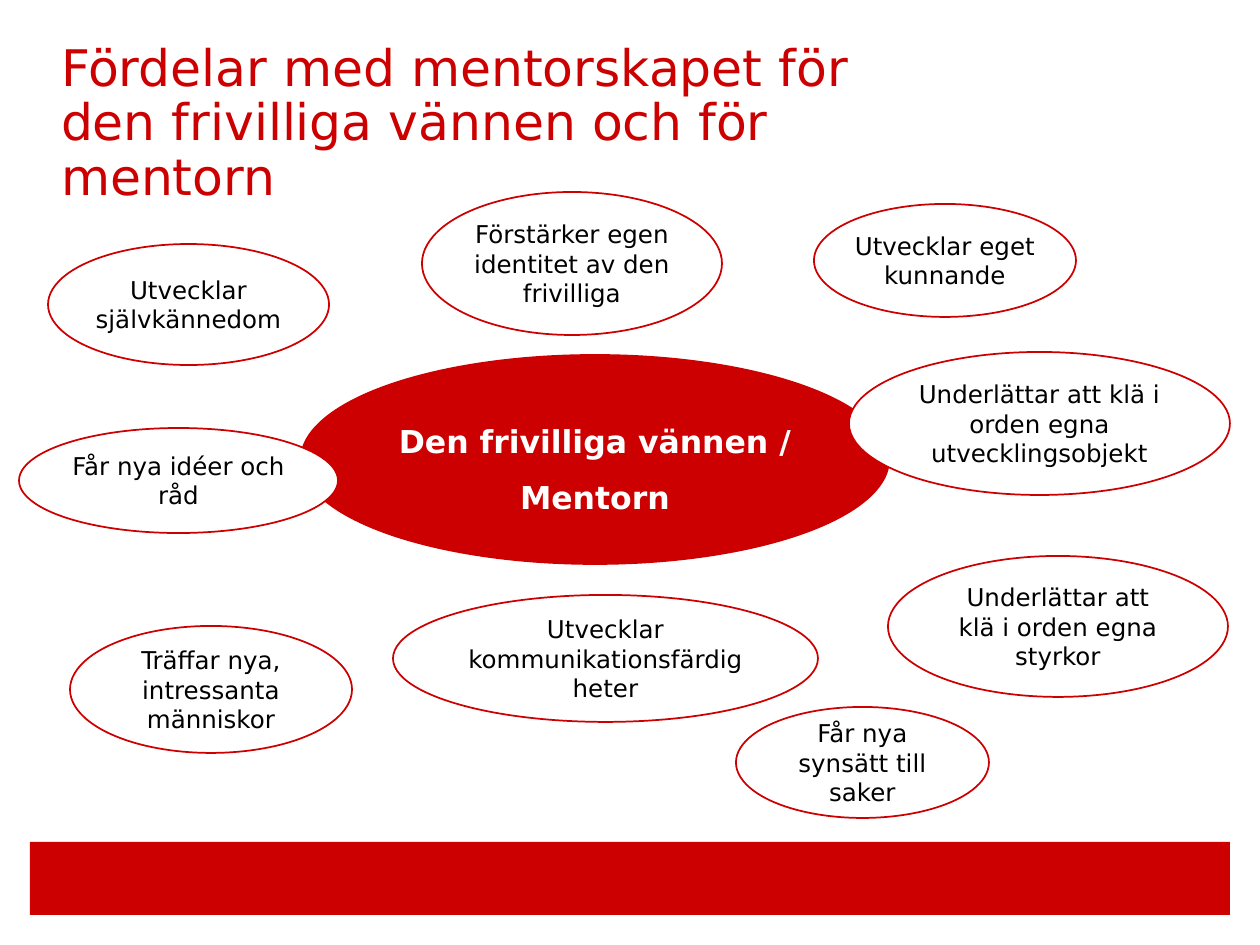
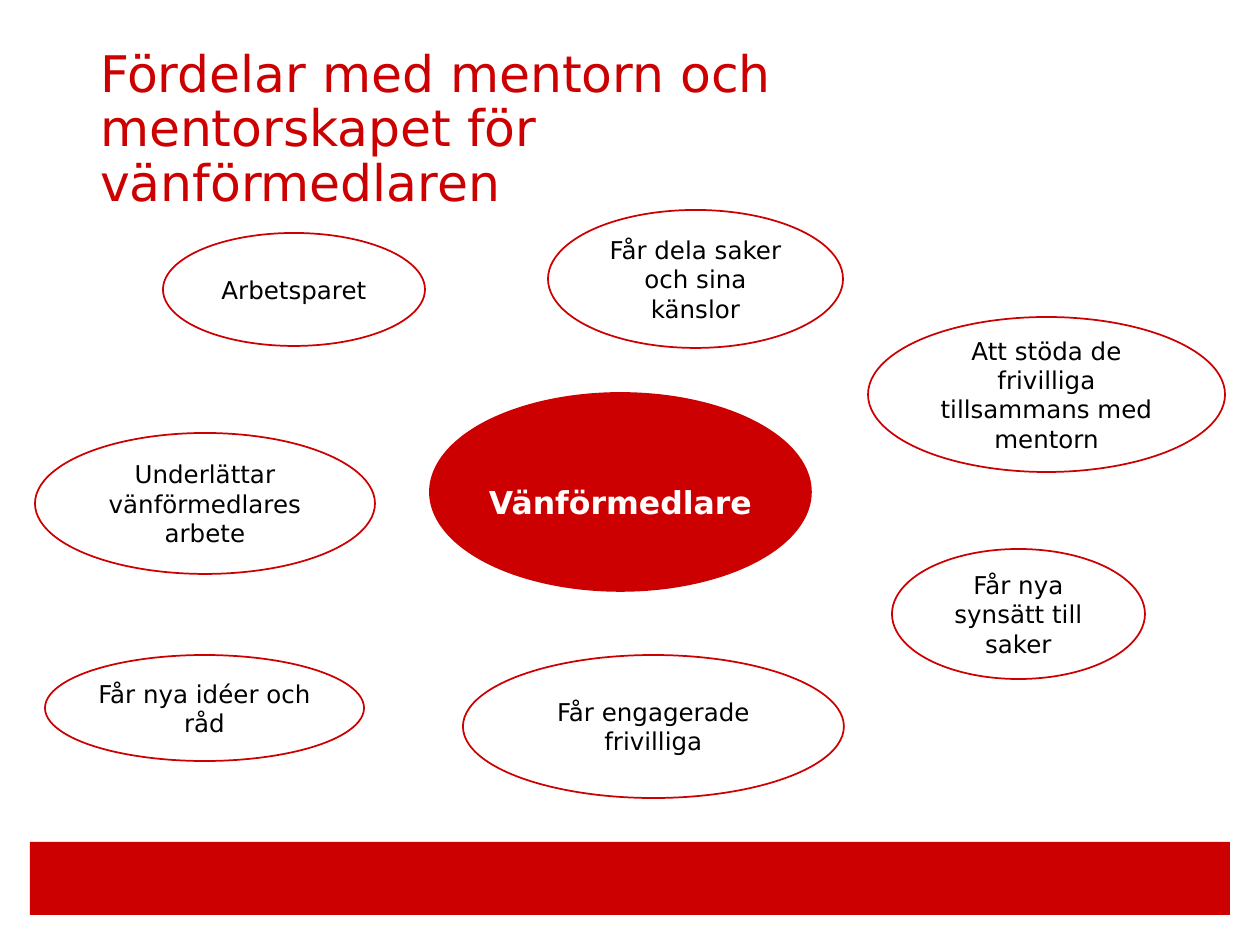
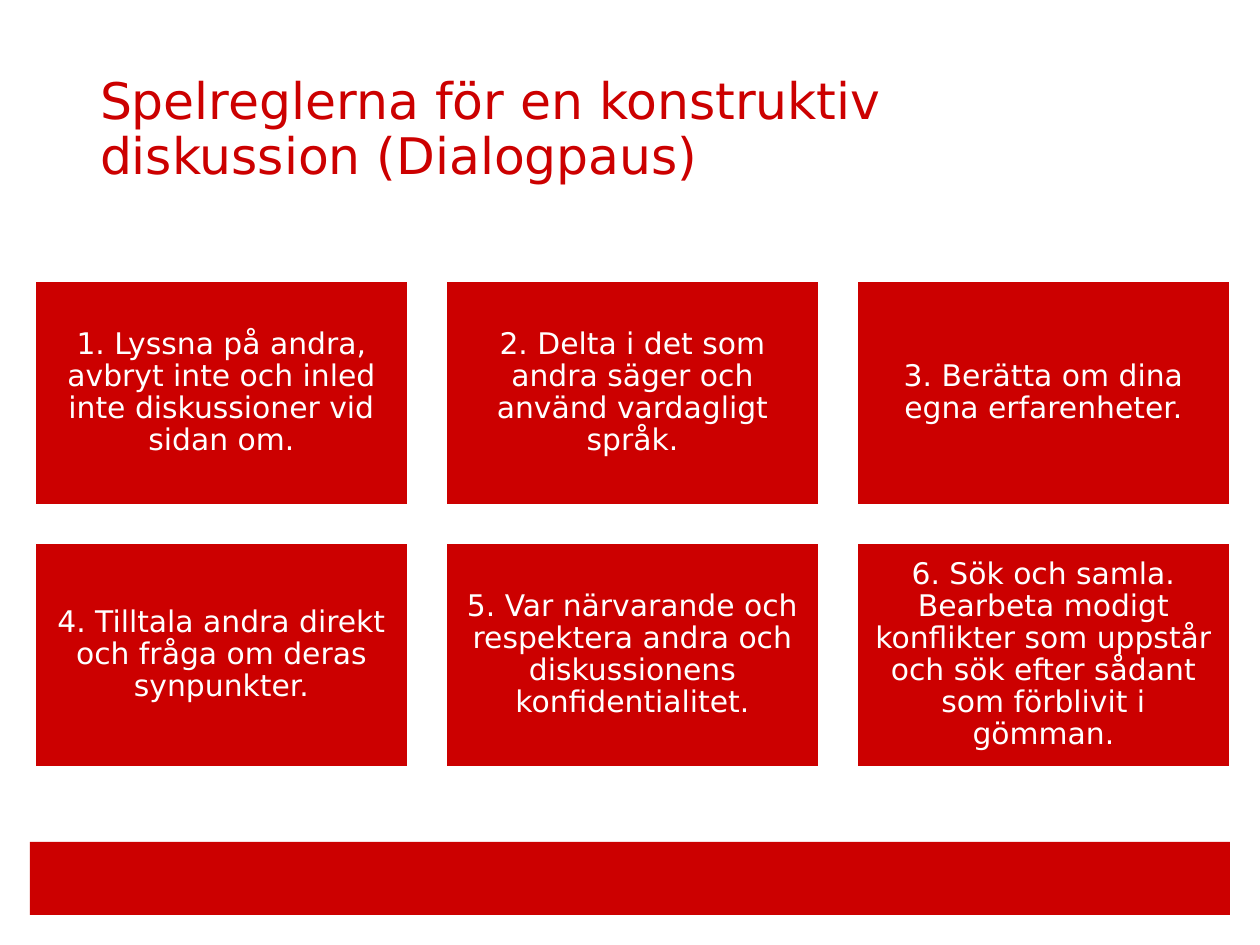
import pptx
import pptx.util
import pptx.dml.color
import pptx.enum.shapes
import pptx.enum.text

SHAPE = pptx.enum.shapes.MSO_SHAPE
ALIGN = pptx.enum.text.PP_ALIGN
ANCHOR = pptx.enum.text.MSO_ANCHOR
Pt = pptx.util.Pt

PX_PER_INCH = 126
FONT = "DejaVu Sans"
COLORS = {"red": "CC0000", "white": "FFFFFF", "black": "000000"}

# Text styles: font and paragraph attributes, and the colour name
STYLES = {
    "title": ({"size": Pt(28.8), "bold": False},
              {"alignment": ALIGN.LEFT, "line_spacing": 0.9}, "red"),
    "hub": ({"size": Pt(18), "bold": True},
            {"alignment": ALIGN.CENTER, "line_spacing": 1.5}, "white"),
    "bubble": ({"size": Pt(14)}, {"alignment": ALIGN.CENTER}, "black"),
    "rule": ({"size": Pt(17)},
             {"alignment": ALIGN.CENTER, "line_spacing": 0.9}, "white"),
}

# Text insets in px: horizontal, vertical
TIGHT = (0, 0)
PADDED = (13, 6)
EVEN = (9, 9)

MENTOR_BUBBLES = [
    ((48, 244, 281, 121), TIGHT, "Utvecklar självkännedom"),
    ((888, 556, 340, 141), PADDED, "Underlättar att klä i orden egna styrkor"),
    ((393, 595, 425, 127), PADDED, "Utvecklar kommunikationsfärdigheter"),
    ((849, 352, 381, 143), PADDED, "Underlättar att klä i orden egna utvecklingsobjekt"),
    ((19, 428, 319, 105), TIGHT, "Får nya idéer och råd"),
    ((70, 626, 282, 127), TIGHT, "Träffar nya, intressanta människor"),
    ((422, 192, 300, 143), TIGHT, "Förstärker egen identitet av den frivilliga"),
    ((736, 707, 253, 111), TIGHT, "Får nya synsätt till saker"),
    ((814, 204, 262, 113), TIGHT, "Utvecklar eget kunnande"),
]

MEDIATOR_BUBBLES = [
    ((163, 233, 262, 113), TIGHT, "Arbetsparet"),
    ((35, 433, 340, 141), PADDED, "Underlättar vänförmedlares arbete"),
    ((463, 655, 381, 143), PADDED, "Får engagerade frivilliga"),
    ((45, 655, 319, 106), TIGHT, "Får nya idéer och råd"),
    ((868, 317, 357, 155), TIGHT, "Att stöda de frivilliga tillsammans med mentorn"),
    ((892, 549, 253, 130), TIGHT, "Får nya synsätt till saker"),
    ((548, 210, 295, 138), PADDED, "Får dela saker och sina känslor"),
]

RULES = [
    "1. Lyssna på andra, avbryt inte och inled inte diskussioner vid sidan om.",
    "2. Delta i det som andra säger och använd vardagligt språk.",
    "3. Berätta om dina egna erfarenheter.",
    "4. Tilltala andra direkt och fråga om deras synpunkter.",
    "5. Var närvarande och respektera andra och diskussionens konfidentialitet.",
    "6. Sök och samla. Bearbeta modigt konflikter som uppstår och sök efter "
    "sådant som förblivit i gömman.",
]


def px(n):
    return pptx.util.Emu(round(n * 914400 / PX_PER_INCH))


def rgb(name):
    return pptx.dml.color.RGBColor.from_string(COLORS[name])


def set_attrs(obj, values):
    for name, value in values.items():
        setattr(obj, name, value)


def write_text(sp, text, style, insets):
    font_values, para_values, color = STYLES[style]
    dx, dy = (px(n) for n in insets)
    tf = sp.text_frame
    set_attrs(tf, {"word_wrap": True, "vertical_anchor": ANCHOR.MIDDLE,
                   "auto_size": pptx.enum.text.MSO_AUTO_SIZE.NONE,
                   "margin_left": dx, "margin_right": dx,
                   "margin_top": dy, "margin_bottom": dy})
    p = tf.paragraphs[0]
    set_attrs(p, para_values)
    r = p.add_run()
    r.text = text
    set_attrs(r.font, {"name": FONT, **font_values})
    r.font.color.rgb = rgb(color)


def add_box(slide, kind, box, fill, line=None, width=1):
    sp = slide.shapes.add_shape(kind, *(px(n) for n in box))
    sp.shadow.inherit = False
    sp.fill.solid()
    sp.fill.fore_color.rgb = rgb(fill)
    if line:
        sp.line.color.rgb = rgb(line)
        sp.line.width = Pt(width)
    else:
        sp.line.fill.background()
    return sp


def add_bubble(slide, box, text, insets=TIGHT, fill="white", style="bubble"):
    sp = add_box(slide, SHAPE.FLOWCHART_CONNECTOR, box, fill, "red")
    write_text(sp, text, style, insets)


def add_titled_slide(prs, title, left=87, top=39):
    slide = prs.slides.add_slide(prs.slide_layouts[5])
    sp = slide.shapes.title
    set_attrs(sp, {"left": px(left), "top": px(top),
                   "width": px(866), "height": px(183)})
    write_text(sp, title, "title", PADDED)
    return slide


def add_bubble_map(slide, hub_box, hub_text, bubbles):
    add_bubble(slide, hub_box, hub_text, fill="red", style="hub")
    for box, insets, text in bubbles:
        add_bubble(slide, box, text, insets)


def add_rule_grid(slide, rules, columns=3):
    left, top, width, height, gap = 35, 281, 373, 224, 38
    for i, text in enumerate(rules):
        row, col = divmod(i, columns)
        box = (left + col * (width + gap), top + row * (height + gap), width, height)
        sp = add_box(slide, SHAPE.RECTANGLE, box, "red", "white", 1.5)
        write_text(sp, text, "rule", EVEN)


def main():
    prs = pptx.Presentation()
    prs.slide_width, prs.slide_height = px(1260), px(945)

    # Benefits for the volunteer and the mentor
    slide = add_titled_slide(
        prs, "Fördelar med mentorskapet för den frivilliga vännen och för mentorn",
        48, 33)
    # The bottom band moves to the layout that all slides share
    band = add_box(slide, SHAPE.RECTANGLE, (30, 842, 1200, 73), "red")
    slide.slide_layout.shapes.element.append(band.element)
    add_bubble_map(slide, (301, 355, 588, 209),
                   "Den frivilliga vännen / Mentorn", MENTOR_BUBBLES)

    # Benefits for the mediator
    slide = add_titled_slide(
        prs, "Fördelar med mentorn och mentorskapet för vänförmedlaren")
    add_bubble_map(slide, (430, 393, 381, 198), "Vänförmedlare", MEDIATOR_BUBBLES)

    # Rules of discussion
    slide = add_titled_slide(
        prs, "Spelreglerna för en konstruktiv diskussion (Dialogpaus)")
    add_rule_grid(slide, RULES)

    prs.save("out.pptx")


if __name__ == "__main__":
    main()
